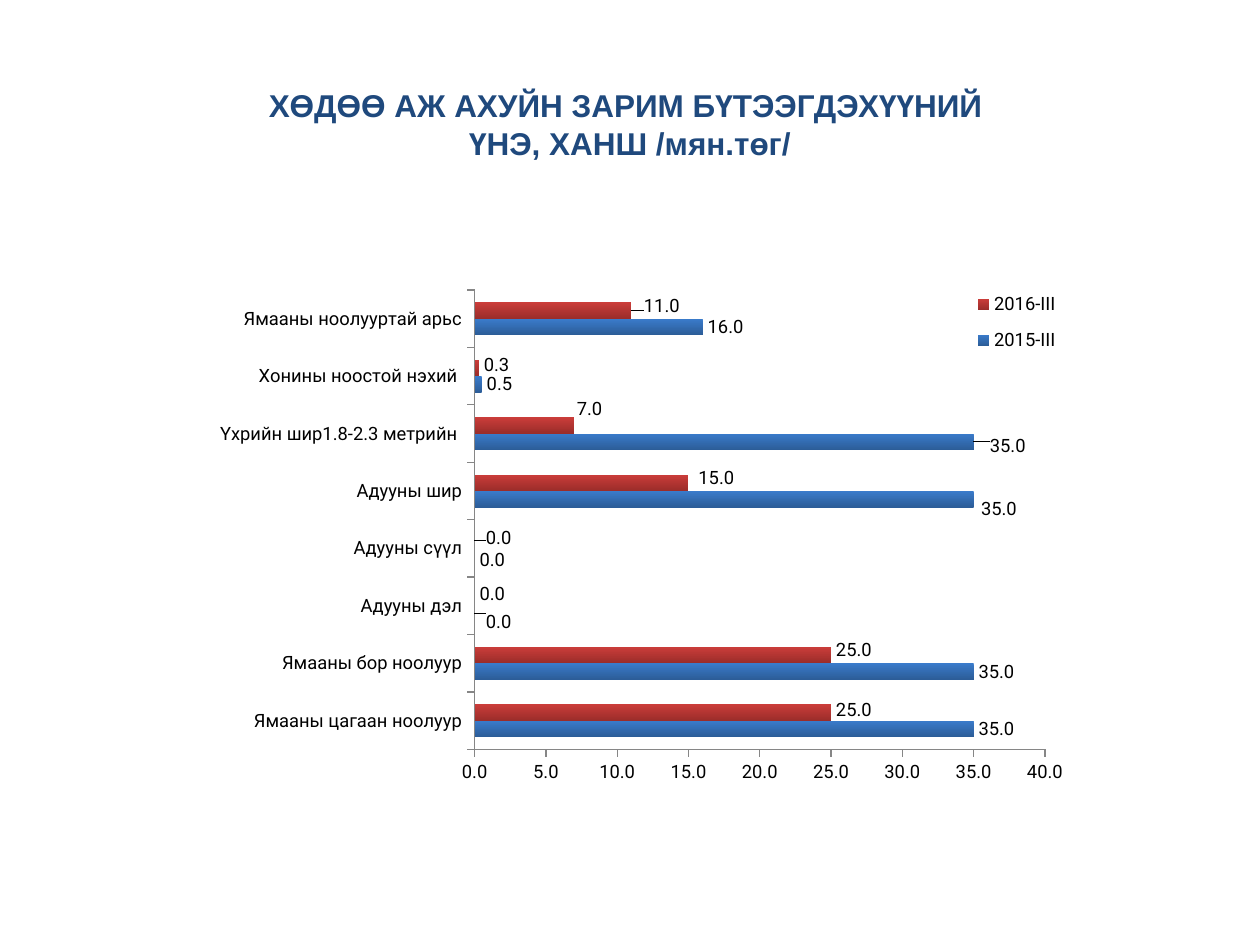
"""Build a slide comparing farm product prices in two quarters as a bar chart."""
from lxml.etree import SubElement
from pptx import Presentation
from pptx.chart.data import CategoryChartData
from pptx.dml.color import RGBColor
from pptx.enum.chart import XL_CHART_TYPE, XL_LABEL_POSITION, XL_LEGEND_POSITION, XL_TICK_MARK
from pptx.enum.text import MSO_ANCHOR, PP_ALIGN
from pptx.oxml.ns import qn
from pptx.util import Inches, Pt

TITLE = "ХӨДӨӨ АЖ АХУЙН ЗАРИМ БҮТЭЭГДЭХҮҮНИЙ \vҮНЭ, ХАНШ /мян.төг/"
CATEGORIES = [
    "Ямааны цагаан ноолуур",
    "Ямааны бор ноолуур",
    "Адууны дэл",
    "Адууны сүүл",
    "Адууны шир",
    "Үхрийн шир1.8-2.3 метрийн ",
    "Хонины ноостой нэхий ",
    "Ямааны ноолууртай арьс",
]
SERIES = [
    {
        "name": "2015-III",
        "values": [35, 35, 0, 0, 35, 35, 0.5, 16],
        "gradient": ("3A7BCB", "2C5D98"),
        "label_shifts": {2: (0.05, 0.06), 3: (0, 0.03), 4: (0.02, 0.08), 5: (0.09, 0.03)},
    },
    {
        "name": "2016-III",
        "values": [25, 25, 0, 0, 15, 7, 0.3, 11],
        "gradient": ("CB3D3A", "9B2D2A"),
        "label_shifts": {
            0: (0, -0.02), 1: (0, -0.04), 2: (0, -0.03), 3: (0.05, -0.02),
            4: (0.04, -0.04), 5: (-0.02, -0.13), 6: (0, -0.02), 7: (0.06, -0.04),
        },
    },
]
THEME = {
    "title": {"name": "Arial", "size": 18, "color": "1F497D", "bold": True},
    "chart": {"name": "Roboto", "size": 10.5, "color": "000000", "bold": False},
    "axis": "868686",
}
NUMBER_FORMAT = "0.0"
TITLE_BOX = (0.5, 0.36, 9, 1.25)
CHART_BOX = (1.17, 2.13, 7.42, 4.29)
PLOT_AREA = {"x": 0.35, "y": 0.04, "w": 0.61, "h": 0.85}
LEGEND_AREA = {"x": 0.87, "y": 0.02, "w": 0.12, "h": 0.16}


def style_font(font, name, size, color, bold):
    font.name, font.size, font.bold = name, Pt(size), bold
    font.color.rgb = RGBColor.from_string(color)


def write_text(shape, text, alignment=PP_ALIGN.CENTER, anchor=MSO_ANCHOR.MIDDLE, **font_format):
    frame = shape.text_frame
    frame.text = text
    frame.word_wrap = True
    frame.vertical_anchor = anchor
    paragraph = frame.paragraphs[0]
    paragraph.alignment = alignment
    for run in paragraph.runs:
        style_font(run.font, **font_format)


def set_layout(element, index, area, absolute=True, inner=False):
    for old_layout in element.findall(qn("c:layout")):
        element.remove(old_layout)
    layout = element.makeelement(qn("c:layout"))
    element.insert(index, layout)
    manual = SubElement(layout, qn("c:manualLayout"))
    settings = {"layoutTarget": "inner"} if inner else {}
    if absolute:
        settings.update(xMode="edge", yMode="edge")
    settings.update(area)
    for tag, value in settings.items():
        SubElement(manual, qn(f"c:{tag}")).set("val", str(value))


def style_axis(axis):
    style_font(axis.tick_labels.font, **THEME["chart"])
    axis.has_major_gridlines = False
    axis.major_tick_mark = XL_TICK_MARK.OUTSIDE
    axis.minor_tick_mark = XL_TICK_MARK.NONE
    axis.format.line.color.rgb = RGBColor.from_string(THEME["axis"])
    axis.format.line.width = Pt(0.75)


def style_labels(labels):
    style_font(labels.font, **THEME["chart"])
    labels.position = XL_LABEL_POSITION.OUTSIDE_END


def style_series(series, content):
    fill = series.format.fill
    fill.gradient()
    fill.gradient_angle = 270
    for stop, color in zip(fill.gradient_stops, content["gradient"]):
        stop.color.rgb = RGBColor.from_string(color)
    labels = series.data_labels
    labels.show_value = True
    labels.number_format, labels.number_format_is_linked = NUMBER_FORMAT, False
    style_labels(labels)
    for point, shift in content["label_shifts"].items():
        style_labels(series.points[point].data_label)
    for element in series._element.iter(qn("c:dLbl")):
        shift = content["label_shifts"][int(element.find(qn("c:idx")).get("val"))]
        fractions = [length / total for length, total in zip(shift, CHART_BOX[2:])]
        set_layout(element, 1, dict(zip("xy", fractions)), absolute=False)
        number_format = element.makeelement(qn("c:numFmt"))
        number_format.set("formatCode", NUMBER_FORMAT)
        number_format.set("sourceLinked", "0")
        element.insert(2, number_format)


def add_price_chart(slide):
    data = CategoryChartData(number_format=NUMBER_FORMAT)
    data.categories = CATEGORIES
    for content in SERIES:
        data.add_series(content["name"], content["values"])
    box = [Inches(length) for length in CHART_BOX]
    chart = slide.shapes.add_chart(XL_CHART_TYPE.BAR_CLUSTERED, *box, data).chart
    style_font(chart.font, **THEME["chart"])
    chart.has_title = False
    chart.has_legend = True
    chart.legend.position = XL_LEGEND_POSITION.RIGHT
    chart.legend.include_in_layout = False
    style_font(chart.legend.font, **THEME["chart"])
    style_axis(chart.category_axis)
    value_axis = chart.value_axis
    style_axis(value_axis)
    value_axis.minimum_scale, value_axis.maximum_scale, value_axis.major_unit = 0, 40, 5
    value_axis.tick_labels.number_format = NUMBER_FORMAT
    value_axis.tick_labels.number_format_is_linked = False
    plot = chart.plots[0]
    plot.gap_width, plot.overlap, plot.vary_by_categories = 150, 0, False
    for series, content in zip(plot.series, SERIES):
        style_series(series, content)
    set_layout(plot._element.getparent(), 0, PLOT_AREA, inner=True)
    set_layout(chart.legend._element, 1, LEGEND_AREA)


def main():
    presentation = Presentation()
    presentation.slide_width, presentation.slide_height = Inches(10), Inches(7.5)
    slide = presentation.slides.add_slide(presentation.slide_layouts[5])
    title = slide.shapes.title
    title.left, title.top, title.width, title.height = [Inches(length) for length in TITLE_BOX]
    write_text(title, TITLE, **THEME["title"])
    add_price_chart(slide)
    presentation.save("out.pptx")


if __name__ == "__main__":
    main()
